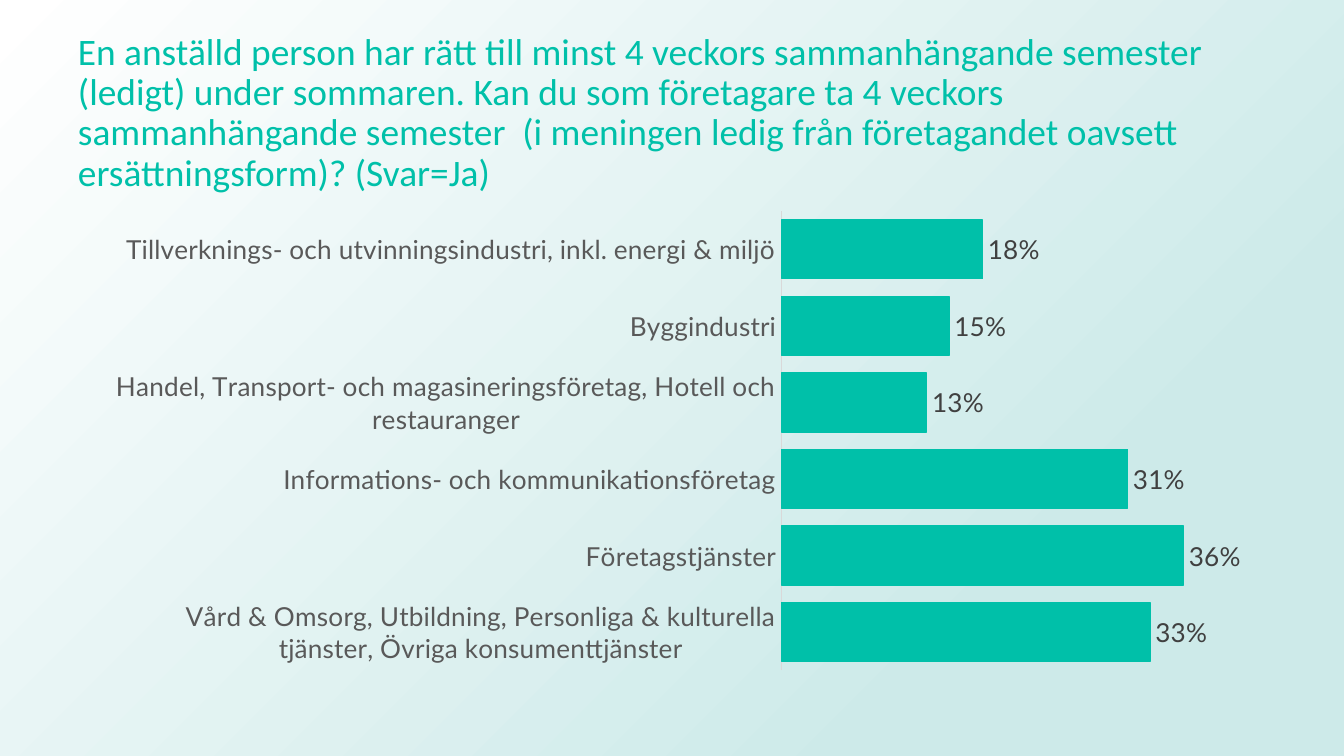
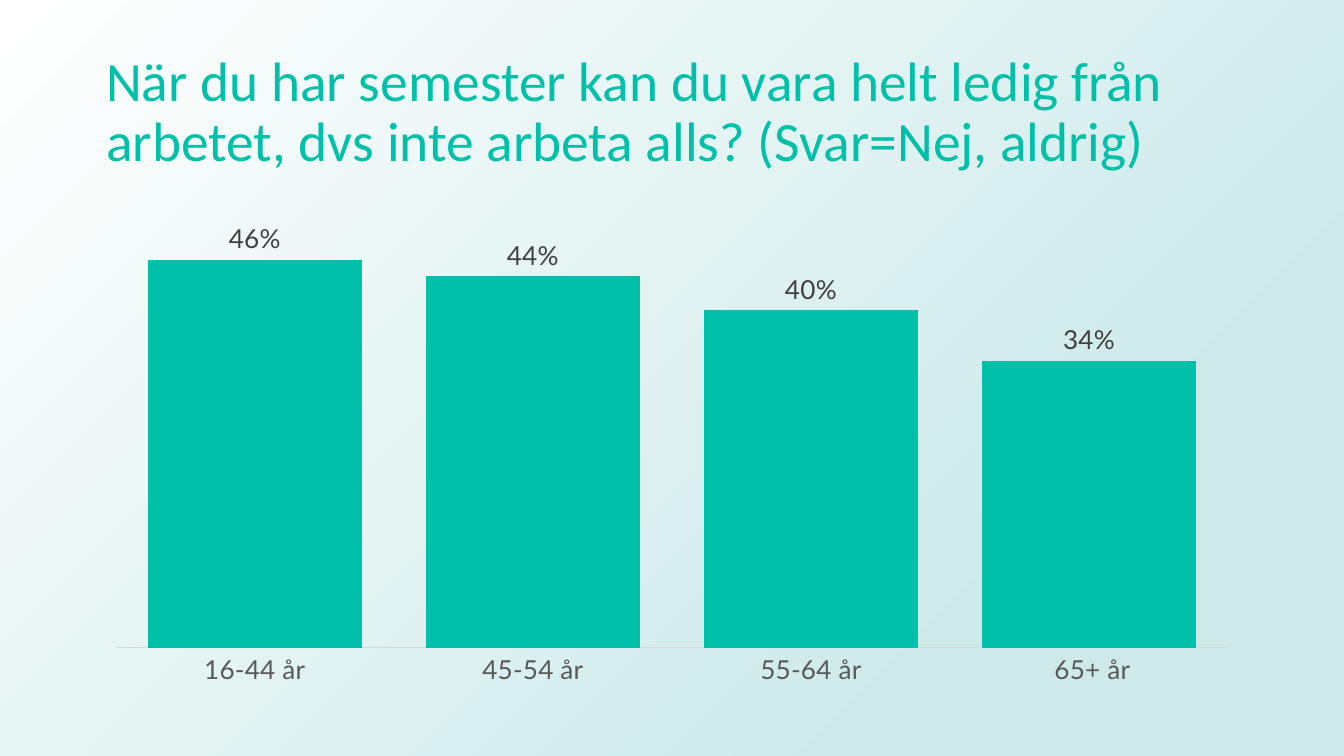
from dataclasses import dataclass

from pptx import Presentation
from pptx.chart.axis import CategoryAxis
from pptx.chart.data import CategoryChartData
from pptx.dml.color import RGBColor
from pptx.enum.chart import XL_CHART_TYPE, XL_LABEL_POSITION, XL_TICK_LABEL_POSITION, XL_TICK_MARK
from pptx.enum.shapes import MSO_SHAPE
from pptx.enum.text import MSO_ANCHOR, MSO_AUTO_SIZE, PP_ALIGN
from pptx.oxml import parse_xml
from pptx.oxml.ns import nsdecls, qn
from pptx.presentation import Presentation as Deck
from pptx.slide import Slide
from pptx.text.text import Font
from pptx.util import Inches, Pt


@dataclass(frozen=True)
class Theme:
    accent: str = "00C0A9"
    mist: str = "CDEAE9"
    white: str = "FFFFFF"
    black: str = "000000"
    label: str = "404040"
    axis: str = "595959"
    rule: str = "D9D9D9"
    head: str = "Calibri"
    body: str = "Lato"
    small: float = 14
    line: float = 0.75


@dataclass(frozen=True)
class Box:
    left: float
    top: float
    width: float
    height: float

    def place(self) -> tuple[int, int, int, int]:
        return (Inches(self.left), Inches(self.top),
                Inches(self.width), Inches(self.height))


@dataclass(frozen=True)
class Page:
    """One question with its bars; top is the end of the value scale."""
    title: str
    size: float
    head: Box
    area: Box
    kind: XL_CHART_TYPE
    top: float
    bars: dict[str, float]
    flip: bool = False
    edge: bool = False


THEME = Theme()
WIDE = 10
FULL = Box(0, 0, WIDE, WIDE * 9 / 16)

PAGES = [
    Page(
        "En anställd person har rätt till minst 4 veckors sammanhängande semester "
        "(ledigt) under sommaren. Kan du som företagare ta 4 veckors "
        "sammanhängande semester  (i meningen ledig från företagandet oavsett "
        "ersättningsform)? (Svar=Ja)",
        20, Box(0.48, 0.3, 8.83, 1.09), Box(0.69, 1.5, 8.62, 3.56),
        XL_CHART_TYPE.BAR_CLUSTERED, 0.4,
        {
            "Tillverknings- och utvinningsindustri, inkl. energi & miljö": 0.18,
            "Byggindustri": 0.15,
            "Handel, Transport- och magasineringsföretag, Hotell och restauranger": 0.13,
            "Informations- och kommunikationsföretag": 0.31,
            "Företagstjänster": 0.36,
            "Vård & Omsorg, Utbildning, Personliga & kulturella tjänster, "
            "Övriga konsumenttjänster": 0.33,
        },
        flip=True, edge=True,
    ),
    Page(
        "När du har semester kan du vara helt ledig från arbetet, "
        "dvs inte arbeta alls? (Svar=Nej, aldrig)",
        29.7, Box(0.69, 0.3, 8.62, 1.09), Box(0.69, 1.61, 8.62, 3.56),
        XL_CHART_TYPE.COLUMN_CLUSTERED, 0.5,
        {"16-44 år": 0.46, "45-54 år": 0.44, "55-64 år": 0.4, " 65+ år": 0.34},
    ),
]


def style(font: Font, name: str, size: float, color: str) -> None:
    font.name, font.size = name, Pt(size)
    font.color.rgb = RGBColor.from_string(color)


def add_glow(deck: Deck, slide: Slide) -> None:
    """Put the radial backdrop on the master, behind everything."""
    glow = slide.shapes.add_shape(MSO_SHAPE.RECTANGLE, *FULL.place())
    glow.shadow.inherit = False
    glow.line.fill.background()
    glow.fill.gradient()
    old = glow.element.spPr.find(qn("a:gradFill"))
    stops = "".join(
        f'<a:gs pos="{pos * 1000}"><a:srgbClr val="{color}"/></a:gs>'
        for pos, color in ((23, THEME.mist), (100, THEME.white)))
    new = parse_xml(
        f'<a:gradFill {nsdecls("a")} rotWithShape="1"><a:gsLst>{stops}</a:gsLst>'
        '<a:path path="circle"><a:fillToRect l="100000" t="100000"/></a:path>'
        '</a:gradFill>')
    old.getparent().replace(old, new)
    deck.slide_master.shapes.element.insert(2, glow.element)


def add_title(slide: Slide, page: Page) -> None:
    title = slide.shapes.title
    title.left, title.top, title.width, title.height = page.head.place()
    frame = title.text_frame
    frame.text = page.title
    frame.word_wrap = True
    frame.auto_size = MSO_AUTO_SIZE.NONE
    frame.vertical_anchor = MSO_ANCHOR.MIDDLE
    para = frame.paragraphs[0]
    para.alignment = PP_ALIGN.LEFT
    para.line_spacing = 0.9
    style(para.font, THEME.head, page.size, THEME.accent)


def style_axis(axis: CategoryAxis, flip: bool) -> None:
    axis.reverse_order = flip
    axis.has_major_gridlines = False
    axis.major_tick_mark = axis.minor_tick_mark = XL_TICK_MARK.NONE
    axis.tick_label_position = XL_TICK_LABEL_POSITION.NEXT_TO_AXIS
    axis.format.line.color.rgb = RGBColor.from_string(THEME.rule)
    axis.format.line.width = Pt(THEME.line)
    style(axis.tick_labels.font, THEME.body, THEME.small, THEME.axis)


def add_bars(slide: Slide, page: Page) -> None:
    data = CategoryChartData(number_format="0%")
    data.categories = list(page.bars)
    data.add_series("Series 1", list(page.bars.values()))
    chart = slide.shapes.add_chart(page.kind, *page.area.place(), data).chart
    chart.has_title = chart.has_legend = False
    style(chart.font, THEME.body, THEME.small, THEME.black)
    style_axis(chart.category_axis, page.flip)

    scale = chart.value_axis
    scale.minimum_scale, scale.maximum_scale = 0, page.top
    scale.has_major_gridlines = False
    scale.tick_labels.number_format = "0%"
    scale.tick_labels.number_format_is_linked = False
    scale.visible = False

    plot = chart.plots[0]
    plot.gap_width = 30
    plot.vary_by_categories = False
    form = plot.series[0].format
    form.fill.solid()
    form.fill.fore_color.rgb = RGBColor.from_string(THEME.accent)
    if page.edge:
        form.line.color.rgb = RGBColor.from_string(THEME.accent)
        form.line.width = Pt(THEME.line)
    else:
        form.line.fill.background()

    labels = plot.series[0].data_labels
    labels.show_value = True
    labels.number_format = "0%"
    labels.number_format_is_linked = False
    labels.position = XL_LABEL_POSITION.OUTSIDE_END
    style(labels.font, THEME.body, THEME.small, THEME.label)


def main() -> None:
    deck = Presentation()
    deck.slide_width, deck.slide_height = Inches(FULL.width), Inches(FULL.height)
    layout = deck.slide_layouts.get_by_name("Title Only")
    for num, page in enumerate(PAGES):
        slide = deck.slides.add_slide(layout)
        if num == 0:
            add_glow(deck, slide)
        add_title(slide, page)
        add_bars(slide, page)
    deck.save("out.pptx")


if __name__ == "__main__":
    main()
